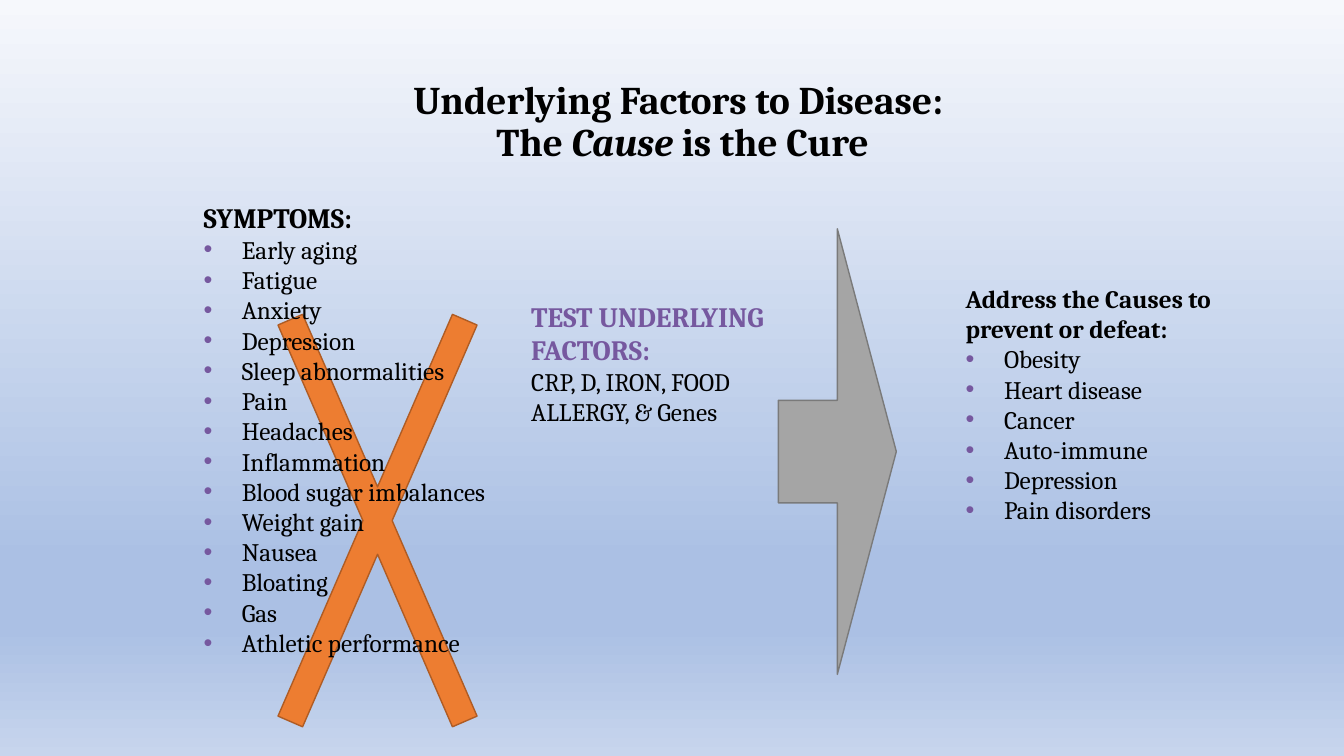
"""Build the slide on the underlying factors to disease."""
from dataclasses import dataclass

import pptx
import pptx.dml.color
import pptx.enum.shapes
import pptx.enum.text
import pptx.oxml
import pptx.oxml.ns
import pptx.util
from pptx.util import Inches

SHAPES = pptx.enum.shapes.MSO_SHAPE
SYMPTOMS = [
    "Early aging", "Fatigue", "Anxiety", "Depression", "Sleep abnormalities",
    "Pain", "Headaches", "Inflammation", "Blood sugar imbalances",
    "Weight gain", "Nausea", "Bloating", "Gas", "Athletic performance",
]
DISEASES = [
    "Obesity", "Heart disease", "Cancer", "Auto-immune", "Depression",
    "Pain disorders",
]


@dataclass(frozen=True)
class Theme:
    """Colours, font and type sizes of the slide."""

    font: str = "Cambria"
    ink: str = "000000"
    accent: str = "76589F"
    cross: str = "ED7D31"
    cross_edge: str = "AF5C24"
    arrow: str = "A5A5A5"
    arrow_edge: str = "7A7A7A"
    title: int = 28
    heading: int = 20
    body: int = 18
    sky: tuple = ((0, "F6F8FC"), (74, "ABC0E4"), (83, "ABC0E4"), (100, "C7D5ED"))


THEME = Theme()


def rgb(value):
    """Return a colour object for a hex string."""
    return pptx.dml.color.RGBColor.from_string(value)


def xml(tag, content="", **attributes):
    """Return a DrawingML element with the given attributes and content."""
    listed = "".join(f' {name}="{value}"' for name, value in attributes.items())
    namespace = pptx.oxml.ns.nsdecls("a")
    return pptx.oxml.parse_xml(f"<a:{tag} {namespace}{listed}>{content}</a:{tag}>")


def paint_background(slide):
    """Fill the background with a gradient running from top to bottom."""
    fill = slide.background.fill
    fill.gradient()
    fill.gradient_angle = 270
    stops = fill.gradient_stops
    stop_list = slide.background._cSld.find(".//" + pptx.oxml.ns.qn("a:gsLst"))
    for stop in list(stop_list):
        stop_list.remove(stop)
    for position, colour in THEME.sky:
        stop_list.append(
            xml("gs", f'<a:srgbClr val="{colour}"/>', pos=position * 1000))


def style_runs(paragraph, size, bold=False, colour=THEME.ink):
    """Give every run of a paragraph the same look."""
    for run in paragraph.runs:
        run.font.name = THEME.font
        run.font.size = pptx.util.Pt(size)
        run.font.bold = bold
        run.font.color.rgb = rgb(colour)


def add_text_frame(slide, left, top, width, height):
    """Add a wrapping text box and return its text frame."""
    box = slide.shapes.add_textbox(
        Inches(left), Inches(top), Inches(width), Inches(height))
    box.text_frame.word_wrap = True
    return box.text_frame


def add_title(slide):
    """Add the centred two-line title with its italic word."""
    frame = add_text_frame(slide, 1.02, 0.49, 11.5, 1.45)
    frame.vertical_anchor = pptx.enum.text.MSO_ANCHOR.MIDDLE
    title = frame.paragraphs[0]
    title.text = "Underlying Factors to Disease: \vThe "
    title.alignment = pptx.enum.text.PP_ALIGN.CENTER
    title.line_spacing = 0.9
    emphasis = title.add_run()
    emphasis.text = "Cause"
    emphasis.font.italic = True
    title.add_run().text = " is the Cure"
    style_runs(title, THEME.title, bold=True)


def add_bullet(paragraph):
    """Give a paragraph a hanging accent-coloured bullet."""
    properties = paragraph._p.get_or_add_pPr()
    properties.set("marL", str(Inches(0.38)))
    properties.set("indent", str(Inches(-0.38)))
    properties.append(xml("buClr", f'<a:srgbClr val="{THEME.accent}"/>'))
    properties.append(xml("buFont", typeface="Arial"))
    properties.append(xml("buChar", char="•"))


def add_topic(slide, place, heading, lines, size=THEME.heading,
              colour=THEME.ink, bulleted=True):
    """Add a bold heading with body lines below it."""
    frame = add_text_frame(slide, *place)
    frame.auto_size = pptx.enum.text.MSO_AUTO_SIZE.SHAPE_TO_FIT_TEXT
    frame.paragraphs[0].text = heading
    style_runs(frame.paragraphs[0], size, bold=True, colour=colour)
    for line in lines:
        paragraph = frame.add_paragraph()
        paragraph.text = line
        if bulleted:
            add_bullet(paragraph)
        style_runs(paragraph, THEME.body)


def add_symbol(slide, kind, place, adjustments, fill, edge):
    """Add a filled and outlined preset shape."""
    symbol = slide.shapes.add_shape(kind, *map(Inches, place))
    for index, value in enumerate(adjustments):
        symbol.adjustments[index] = value
    symbol.shadow.inherit = False
    symbol.fill.solid()
    symbol.fill.fore_color.rgb = rgb(fill)
    symbol.line.color.rgb = rgb(edge)
    symbol.line.width = pptx.util.Pt(1)


def main():
    """Build and save the slide."""
    deck = pptx.Presentation()
    deck.slide_width = Inches(13.33)
    deck.slide_height = Inches(7.5)
    slide = deck.slides.add_slide(deck.slide_layouts[6])
    paint_background(slide)
    add_symbol(slide, SHAPES.MATH_MULTIPLY, (2.08, 1.33, 3.33, 7.67), [0.08],
               THEME.cross, THEME.cross_edge)
    add_title(slide)
    add_topic(slide, (1.92, 1.94, 3.42, 4.75), "SYMPTOMS:", SYMPTOMS)
    add_topic(slide, (5.17, 2.92, 2.75, 1.38), "TEST UNDERLYING FACTORS:",
              ["CRP, D, IRON, FOOD ALLERGY, & Genes"],
              colour=THEME.accent, bulleted=False)
    add_topic(slide, (9.48, 2.76, 2.67, 2.83),
              "Address the Causes to prevent or defeat:", DISEASES,
              size=THEME.body)
    add_symbol(slide, SHAPES.RIGHT_ARROW, (7.72, 2.27, 1.17, 4.42), [0.23, 0.5],
               THEME.arrow, THEME.arrow_edge)
    deck.save("out.pptx")


if __name__ == "__main__":
    main()
